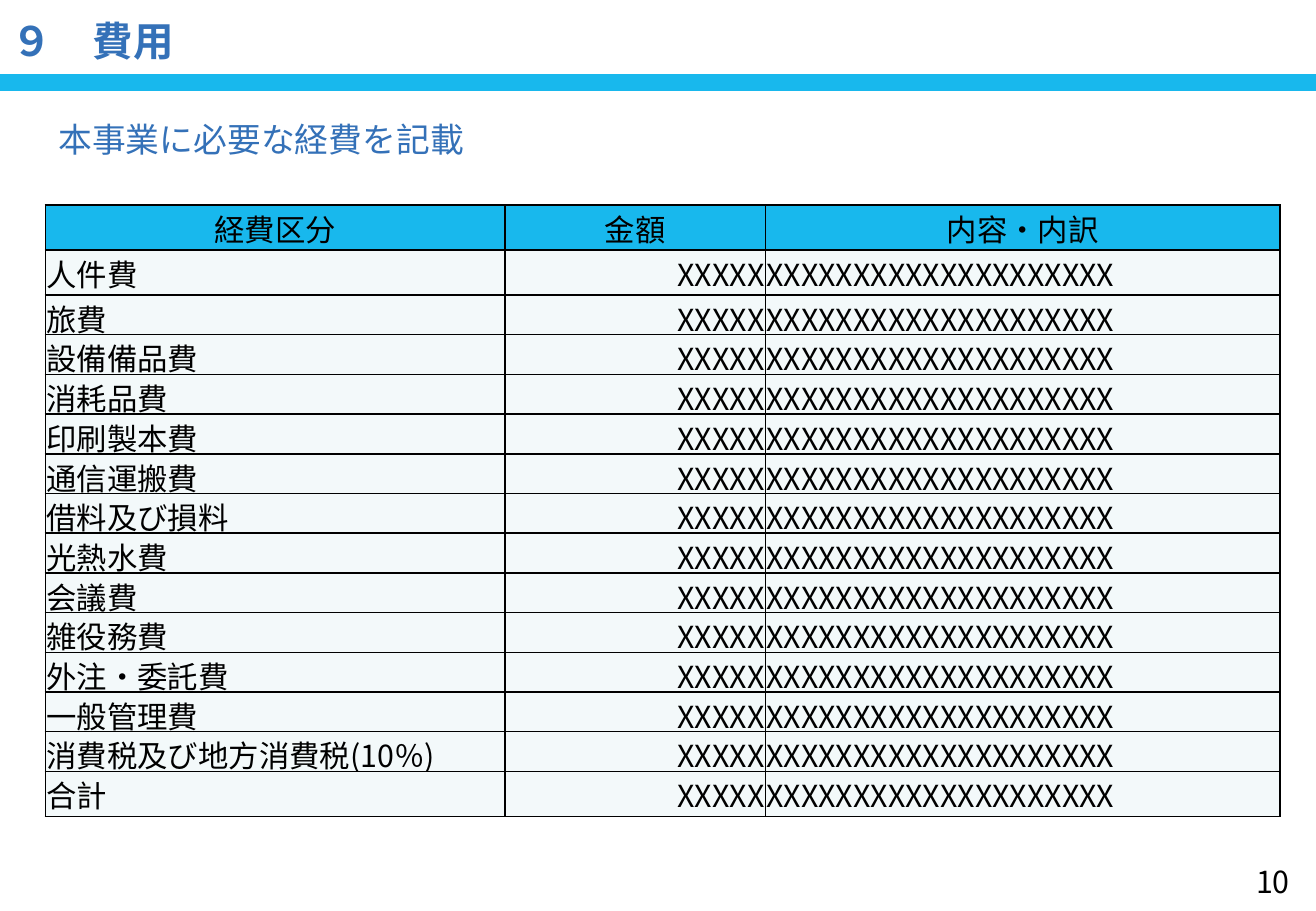
from lxml import etree
from pptx import Presentation
from pptx.dml.color import RGBColor
from pptx.enum.shapes import MSO_CONNECTOR
from pptx.enum.text import MSO_ANCHOR, PP_ALIGN
from pptx.oxml.ns import qn
from pptx.util import Cm, Pt

LEFT, CENTER, RIGHT = PP_ALIGN.LEFT, PP_ALIGN.CENTER, PP_ALIGN.RIGHT
MIDDLE = MSO_ANCHOR.MIDDLE
STRAIGHT = MSO_CONNECTOR.STRAIGHT

FONT = "Noto Sans CJK JP"
BLACK, BLUE, CYAN, PALE = "000000", "3471B8", "18B8ED", "F3F9FA"
SLIDE_WIDTH, SLIDE_HEIGHT = 27.51, 19.05

HEADINGS = ["経費区分", "金額", "内容・内訳"]
EXPENSES = [
    "人件費", "旅費", "設備備品費", "消耗品費", "印刷製本費", "通信運搬費",
    "借料及び損料", "光熱水費", "会議費", "雑役務費", "外注・委託費",
    "一般管理費", "消費税及び地方消費税(10％)", "合計",
]
AMOUNT, DETAIL = "X" * 5, "X" * 20
COLUMN_WIDTHS = [9.61, 5.44, 10.76]
TALL_ROW, ROW = 0.94, 0.83


def color(value):
    return RGBColor.from_string(value)


def write(frame, text, size, ink, align=LEFT, bold=False):
    frame.text = text
    paragraph = frame.paragraphs[0]
    paragraph.alignment = align
    for run in paragraph.runs:
        run.font.size = Pt(size)
        run.font.bold = bold
        run.font.name = FONT
        run.font.color.rgb = color(ink)
        east_asian = etree.SubElement(run.font._element, qn("a:ea"))
        east_asian.set("typeface", FONT)


def add_label(slide, left, top, width, height, text, size, ink, **style):
    frame = slide.shapes.add_textbox(
        Cm(left), Cm(top), Cm(width), Cm(height)).text_frame
    frame.word_wrap = True
    frame.vertical_anchor = MIDDLE
    frame.margin_top = frame.margin_bottom = 0
    write(frame, text, size, ink, **style)


def add_rule(slide, top, width, ink):
    rule = slide.shapes.add_connector(
        STRAIGHT, 0, Cm(top), Cm(SLIDE_WIDTH), Cm(top))
    rule.line.color.rgb = color(ink)
    rule.line.width = Pt(width)
    etree.SubElement(rule._element.spPr, qn("a:effectLst"))


def add_borders(cell, ink, width):
    properties = cell._tc.get_or_add_tcPr()
    # Border lines come before the fill
    for position, side in enumerate(("a:lnL", "a:lnR", "a:lnT", "a:lnB")):
        line = etree.Element(qn(side), w=str(Pt(width)))
        fill = etree.SubElement(line, qn("a:solidFill"))
        etree.SubElement(fill, qn("a:srgbClr"), val=ink)
        properties.insert(position, line)


def fill_cell(cell, text, background, align):
    cell.margin_left = cell.margin_right = cell.margin_top = Cm(0.02)
    cell.margin_bottom = 0
    cell.vertical_anchor = MIDDLE
    cell.fill.solid()
    cell.fill.fore_color.rgb = color(background)
    write(cell.text_frame, text, 18, BLACK, align)
    add_borders(cell, BLACK, 1)


def add_cost_table(slide, left, top):
    rows = [HEADINGS] + [[name, AMOUNT, DETAIL] for name in EXPENSES]
    heights = [TALL_ROW] * 2 + [ROW] * (len(rows) - 3) + [TALL_ROW]
    costs = slide.shapes.add_table(
        len(rows), len(HEADINGS), Cm(left), Cm(top),
        Cm(sum(COLUMN_WIDTHS)), Cm(sum(heights))).table
    for column, width in zip(costs.columns, COLUMN_WIDTHS):
        column.width = Cm(width)
    for index, (texts, height) in enumerate(zip(rows, heights)):
        costs.rows[index].height = Cm(height)
        background = PALE if index else CYAN
        alignments = (LEFT, RIGHT, LEFT) if index else (CENTER,) * 3
        for cell, text, align in zip(costs.rows[index].cells, texts, alignments):
            fill_cell(cell, text, background, align)


def main():
    presentation = Presentation()
    presentation.slide_width = Cm(SLIDE_WIDTH)
    presentation.slide_height = Cm(SLIDE_HEIGHT)
    slide = presentation.slides.add_slide(presentation.slide_layouts[6])

    # Rule and page number
    add_rule(slide, 1.73, 10, CYAN)
    add_label(slide, 25.76, 17.93, 1.7, 1.02, "10", 18, BLACK, align=CENTER)

    # Title and lead
    add_label(slide, 0, 0.2, 24.77, 1.27, "９　費用", 24, BLUE, bold=True)
    add_label(slide, 0.97, 2.34, 25.81, 1.12, "本事業に必要な経費を記載", 20, BLUE)

    # Costs
    add_cost_table(slide, 0.95, 4.29)

    presentation.save("out.pptx")


if __name__ == "__main__":
    main()
